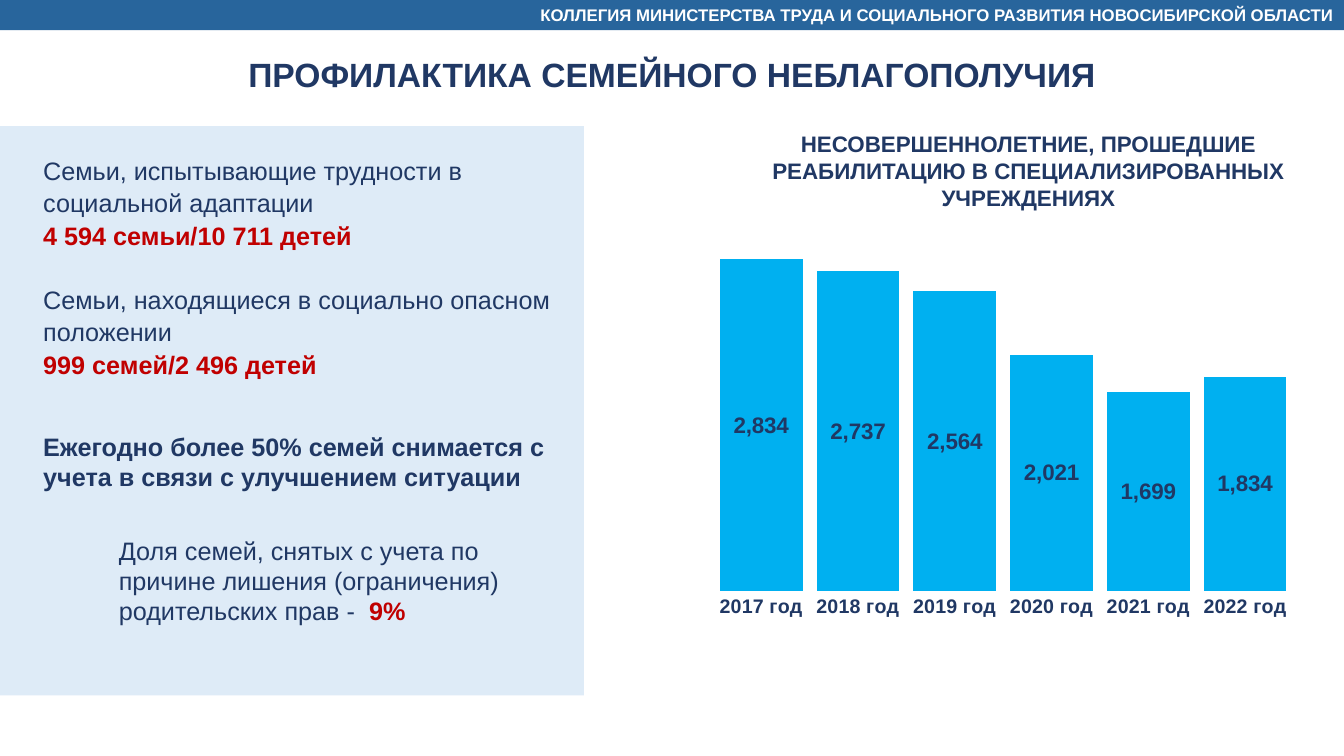
import dataclasses
import typing

import lxml.etree
import pptx
import pptx.chart.data
import pptx.dml.color
import pptx.enum.chart
import pptx.enum.shapes
import pptx.enum.text
import pptx.oxml.ns
import pptx.util

Inches = pptx.util.Inches
Align = pptx.enum.text.PP_ALIGN

COLORS = {
    "navy": "203864",
    "red": "C00000",
    "panel": "DEEBF7",
    "band": "28659C",
    "white": "FFFFFF",
    "bar": "00B0F0",
}
FONT = "Arial"


class Run(typing.NamedTuple):
    text: str
    color: str = "navy"
    bold: bool = False


class Line(typing.NamedTuple):
    runs: list[Run]
    space_before: float = 0


class Box(typing.NamedTuple):
    left: float
    top: float
    width: float
    height: float

    def lengths(self) -> list[int]:
        return [Inches(value) for value in self]


@dataclasses.dataclass
class TextBlock:
    box: Box
    lines: list[Line]
    size: int = 18
    align: Align = Align.LEFT
    spacing: float = 1.0


def rgb(color: str) -> pptx.dml.color.RGBColor:
    return pptx.dml.color.RGBColor.from_string(COLORS[color])


def set_font(font: typing.Any, size: int, color: str, bold: bool) -> None:
    settings = {"name": FONT, "size": pptx.util.Pt(size), "bold": bold}
    for attribute, value in settings.items():
        setattr(font, attribute, value)
    font.color.rgb = rgb(color)


def fill_text(frame: typing.Any, block: TextBlock) -> None:
    settings = {
        "word_wrap": True,
        "auto_size": pptx.enum.text.MSO_AUTO_SIZE.NONE,
    }
    for attribute, value in settings.items():
        setattr(frame, attribute, value)
    for index, line in enumerate(block.lines):
        paragraph = frame.add_paragraph() if index else frame.paragraphs[0]
        paragraph.alignment = block.align
        paragraph.line_spacing = block.spacing
        if line.space_before:
            paragraph.space_before = pptx.util.Pt(line.space_before)
        for part in line.runs:
            run = paragraph.add_run()
            run.text = part.text
            set_font(run.font, block.size, part.color, part.bold)


def add_rectangle(slide: typing.Any, box: Box, color: str) -> typing.Any:
    rectangle = slide.shapes.add_shape(
        pptx.enum.shapes.MSO_SHAPE.RECTANGLE, *box.lengths()
    )
    rectangle.shadow.inherit = False
    rectangle.fill.solid()
    rectangle.fill.fore_color.rgb = rgb(color)
    rectangle.line.fill.background()
    return rectangle


def set_plot_layout(chart: typing.Any, layout_values: dict[str, typing.Any]) -> None:
    qn = pptx.oxml.ns.qn
    plot_area = chart.element.find(".//" + qn("c:plotArea"))
    for previous in plot_area.findall(qn("c:layout")):
        plot_area.remove(previous)
    layout = lxml.etree.Element(qn("c:layout"))
    manual = lxml.etree.SubElement(layout, qn("c:manualLayout"))
    for tag, value in layout_values.items():
        lxml.etree.SubElement(manual, qn("c:" + tag)).set("val", str(value))
    plot_area.insert(0, layout)


def add_rehabilitation_chart(slide: typing.Any, box: Box) -> None:
    data = pptx.chart.data.CategoryChartData(number_format="#,##0")
    data.categories = [f"{year} год" for year in range(2017, 2023)]
    data.add_series("Несовершеннолетние", [2834, 2737, 2564, 2021, 1699, 1834])
    chart = slide.shapes.add_chart(
        pptx.enum.chart.XL_CHART_TYPE.COLUMN_CLUSTERED, *box.lengths(), data
    ).chart
    chart.has_legend = False
    chart.has_title = False
    set_font(chart.font, 14, "navy", True)

    # Axes
    years = chart.category_axis
    years.major_tick_mark = pptx.enum.chart.XL_TICK_MARK.NONE
    years.format.line.fill.background()
    set_font(years.tick_labels.font, 14, "navy", True)
    scale = {
        "visible": False,
        "has_major_gridlines": False,
        "minimum_scale": 0,
        "maximum_scale": 3000,
    }
    for attribute, value in scale.items():
        setattr(chart.value_axis, attribute, value)

    # Columns and their values
    columns = chart.plots[0]
    columns.gap_width = 17
    columns.vary_by_categories = False
    children = columns.series[0]
    children.format.fill.solid()
    children.format.fill.fore_color.rgb = rgb("bar")
    labels = children.data_labels
    label_settings = {
        "show_value": True,
        "position": pptx.enum.chart.XL_LABEL_POSITION.CENTER,
        "number_format": "#,##0",
        "number_format_is_linked": False,
    }
    for attribute, value in label_settings.items():
        setattr(labels, attribute, value)
    set_font(labels.font, 16, "navy", True)
    set_plot_layout(chart, {
        "layoutTarget": "inner", "xMode": "edge", "yMode": "edge",
        "x": 0, "y": 0.01, "w": 0.92, "h": 0.83,
    })


HEADER = TextBlock(
    Box(0, 0, 13.33, 0.3),
    [Line([Run("КОЛЛЕГИЯ МИНИСТЕРСТВА ТРУДА И СОЦИАЛЬНОГО РАЗВИТИЯ "
               "НОВОСИБИРСКОЙ ОБЛАСТИ", "white", True)])],
    size=12, align=Align.RIGHT,
)
TITLE = TextBlock(
    Box(0, 0.48, 13.33, 0.5),
    [Line([Run("ПРОФИЛАКТИКА СЕМЕЙНОГО НЕБЛАГОПОЛУЧИЯ", bold=True)])],
    size=24, align=Align.CENTER,
)
TEXT_BLOCKS = [
    TextBlock(
        Box(7.07, 1.24, 6.26, 0.91),
        [Line([Run("НЕСОВЕРШЕННОЛЕТНИЕ, ПРОШЕДШИЕ РЕАБИЛИТАЦИЮ В "
                   "СПЕЦИАЛИЗИРОВАННЫХ УЧРЕЖДЕНИЯХ", bold=True)])],
        size=16, align=Align.CENTER,
    ),
    TextBlock(
        Box(0.33, 1.47, 5.68, 2.37),
        [
            Line([Run("Семьи, испытывающие трудности в социальной адаптации")]),
            Line([Run("4 594 семьи/10 711 детей", "red", True)]),
            Line([Run("Семьи, находящиеся в социально опасном положении")], 23),
            Line([Run("999 семей/2 496 детей", "red", True)]),
        ],
        spacing=1.07,
    ),
    TextBlock(
        Box(0.33, 4.23, 5.68, 0.71),
        [Line([Run("Ежегодно более 50% семей снимается с учета в связи с "
                   "улучшением ситуации", bold=True)])],
    ),
    TextBlock(
        Box(1.08, 5.26, 4.72, 1.01),
        [Line([Run("Доля семей, снятых с учета по причине лишения "
                   "(ограничения) родительских прав -  "),
               Run("9%", "red", True)])],
    ),
]


def main() -> None:
    presentation = pptx.Presentation()
    presentation.slide_width = Inches(13.33)
    presentation.slide_height = Inches(7.5)
    slide = presentation.slides.add_slide(presentation.slide_layouts[5])

    # Header band and title
    band = add_rectangle(slide, HEADER.box, "band")
    fill_text(band.text_frame, HEADER)
    title = slide.shapes.title
    for side, length in zip(TITLE.box._fields, TITLE.box.lengths()):
        setattr(title, side, length)
    fill_text(title.text_frame, TITLE)

    # Family figures on the panel, and the chart heading
    add_rectangle(slide, Box(0, 1.25, 5.79, 5.65), "panel")
    for block in TEXT_BLOCKS:
        fill_text(slide.shapes.add_textbox(*block.box.lengths()).text_frame, block)

    # Rehabilitation by year
    add_rehabilitation_chart(slide, Box(7.07, 2.34, 6.26, 4.2))
    presentation.save("out.pptx")


if __name__ == "__main__":
    main()
